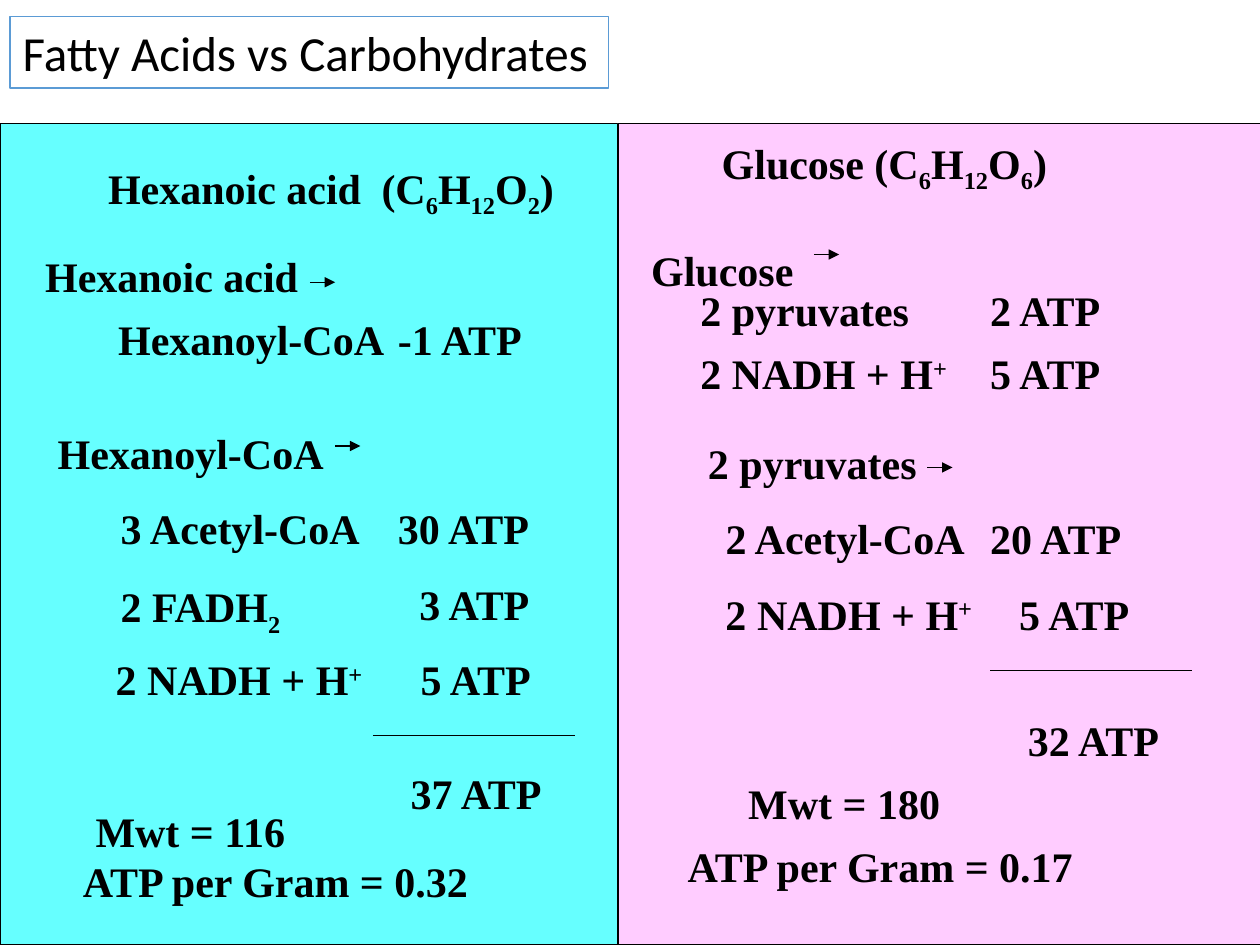
from pptx import Presentation
from pptx.dml.color import RGBColor
from pptx.enum.shapes import MSO_CONNECTOR, MSO_SHAPE
from pptx.enum.text import MSO_ANCHOR, PP_ALIGN
from pptx.oxml.ns import qn
from pptx.util import Inches, Pt
from lxml import etree

RECT = MSO_SHAPE.RECTANGLE
STRAIGHT = MSO_CONNECTOR.STRAIGHT
TOP = MSO_ANCHOR.TOP
LEFT = PP_ALIGN.LEFT

BLACK = RGBColor(0x00, 0x00, 0x00)
WHITE = RGBColor(0xFF, 0xFF, 0xFF)
CYAN = RGBColor(0x66, 0xFF, 0xFF)
PINK = RGBColor(0xFF, 0xCC, 0xFF)
BLUE = RGBColor(0x5B, 0x9B, 0xD5)

BODY = {"name": "Times New Roman", "size": Pt(24), "bold": True}
HEADING = {"name": "Calibri", "size": Pt(28), "bold": False}
BASELINES = {"_": "-25000", "^": "30000"}


def write(sp, text, font):
    tf = sp.text_frame
    tf.word_wrap = False
    tf.vertical_anchor = TOP
    p = tf.paragraphs[0]
    p.alignment = LEFT
    for part in text.split("|"):
        r = p.add_run()
        r.text = part.lstrip("_^")
        for key, value in font.items():
            setattr(r.font, key, value)
        r.font.color.rgb = BLACK
        if part[0] in BASELINES:
            r.font._element.set("baseline", BASELINES[part[0]])


def add_line(x, y, length, arrow):
    line = s.shapes.add_connector(
        STRAIGHT, Inches(x), Inches(y), Inches(x + length), Inches(y))
    line.line.color.rgb = BLACK
    line.line.width = Pt(0.75)
    if arrow:
        ln = line.line._get_or_add_ln()
        etree.SubElement(ln, qn("a:tailEnd"), type="triangle")
    etree.SubElement(line._element.spPr, qn("a:effectLst"))


prs = Presentation()
prs.slide_width = Inches(10)
prs.slide_height = Inches(7.5)
s = prs.slides.add_slide(prs.slide_layouts[5])

for x, width, color in [(0, 4.9, CYAN), (4.91, 5.1, PINK)]:
    sp = s.shapes.add_shape(RECT, Inches(x), Inches(0.98), Inches(width), Inches(6.52))
    sp.shadow.inherit = False
    sp.fill.solid()
    sp.fill.fore_color.rgb = color
    sp.line.color.rgb = BLACK
    sp.line.width = Pt(0.75)

hexanoic_acid = [
    (0.76, 1.24, 2.23, "Hexanoic acid"),
    (2.93, 1.24, 1.64, "(C|_6|H|_12|O|_2|)"),
    (0.26, 1.94, 2.31, "Hexanoic acid"),
    (0.84, 2.44, 2.33, "Hexanoyl-CoA"),
    (3.06, 2.44, 1.2, "-1 ATP"),
    (0.36, 3.34, 2.33, "Hexanoyl-CoA"),
    (0.86, 3.94, 2.12, "3 Acetyl-CoA"),
    (3.06, 3.94, 1.25, "30 ATP"),
    (0.86, 4.56, 1.5, "2 FADH|_2"),
    (3.23, 4.54, 1.08, "3 ATP"),
    (0.82, 5.14, 2.2, "2 NADH + H|^+"),
    (3.24, 5.14, 1.08, "5 ATP"),
    (3.16, 6.04, 1.25, "37 ATP"),
    (0.66, 6.34, 1.72, "Mwt = 116"),
    (0.56, 6.74, 3.38, "ATP per Gram = 0.32"),
]
glucose = [
    (5.63, 1.04, 2.86, "Glucose (C|_6|H|_12|O|_6|)"),
    (5.07, 1.89, 1.34, "Glucose"),
    (5.46, 2.21, 1.88, "2 pyruvates"),
    (7.76, 2.21, 1.08, "2 ATP"),
    (5.46, 2.71, 2.2, "2 NADH + H|^+"),
    (7.76, 2.71, 1.15, "5 ATP"),
    (5.52, 3.42, 1.88, "2 pyruvates"),
    (5.66, 4.02, 2.12, "2 Acetyl-CoA"),
    (7.76, 4.02, 1.25, "20 ATP"),
    (5.66, 4.62, 2.2, "2 NADH + H|^+"),
    (7.99, 4.62, 1.08, "5 ATP"),
    (8.06, 5.62, 1.25, "32 ATP"),
    (5.84, 6.12, 1.74, "Mwt = 180"),
    (5.36, 6.62, 3.29, "ATP per Gram = 0.17"),
]
for x, y, width, text in hexanoic_acid + glucose:
    sp = s.shapes.add_textbox(Inches(x), Inches(y), Inches(width), Inches(0.5))
    write(sp, text, BODY)

for x, y in [(2.46, 2.24), (2.66, 3.54), (6.46, 2.02), (7.36, 3.71)]:
    add_line(x, y, 0.2, True)
for x, y in [(2.96, 5.84), (7.86, 5.32)]:
    add_line(x, y, 1.6, False)

title = s.shapes.title
title.left, title.top = Inches(0.08), Inches(0.13)
title.width, title.height = Inches(4.75), Inches(0.57)
title.fill.solid()
title.fill.fore_color.rgb = WHITE
title.line.color.rgb = BLUE
title.line.width = Pt(1)
write(title, "Fatty Acids vs Carbohydrates", HEADING)

prs.save("out.pptx")
